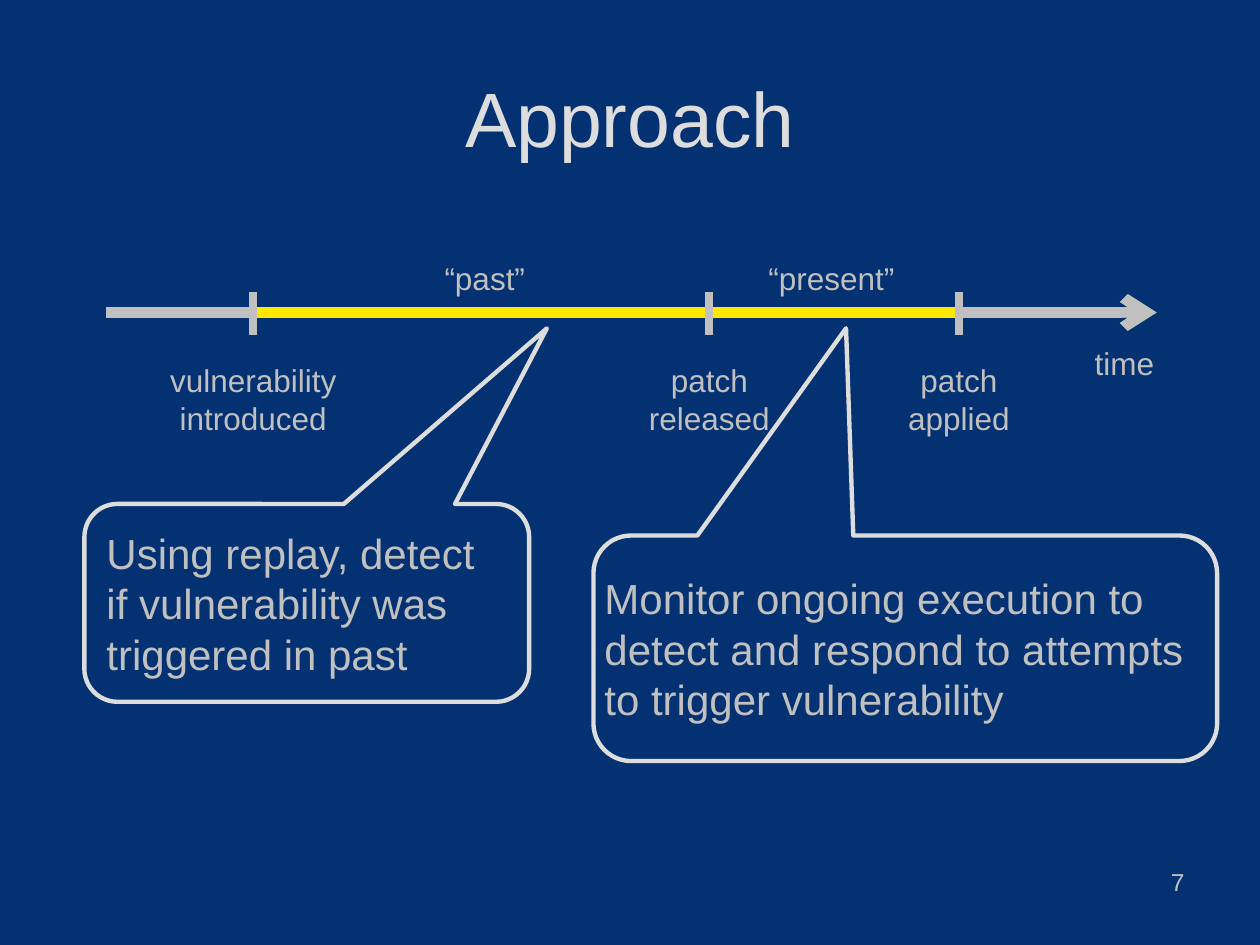
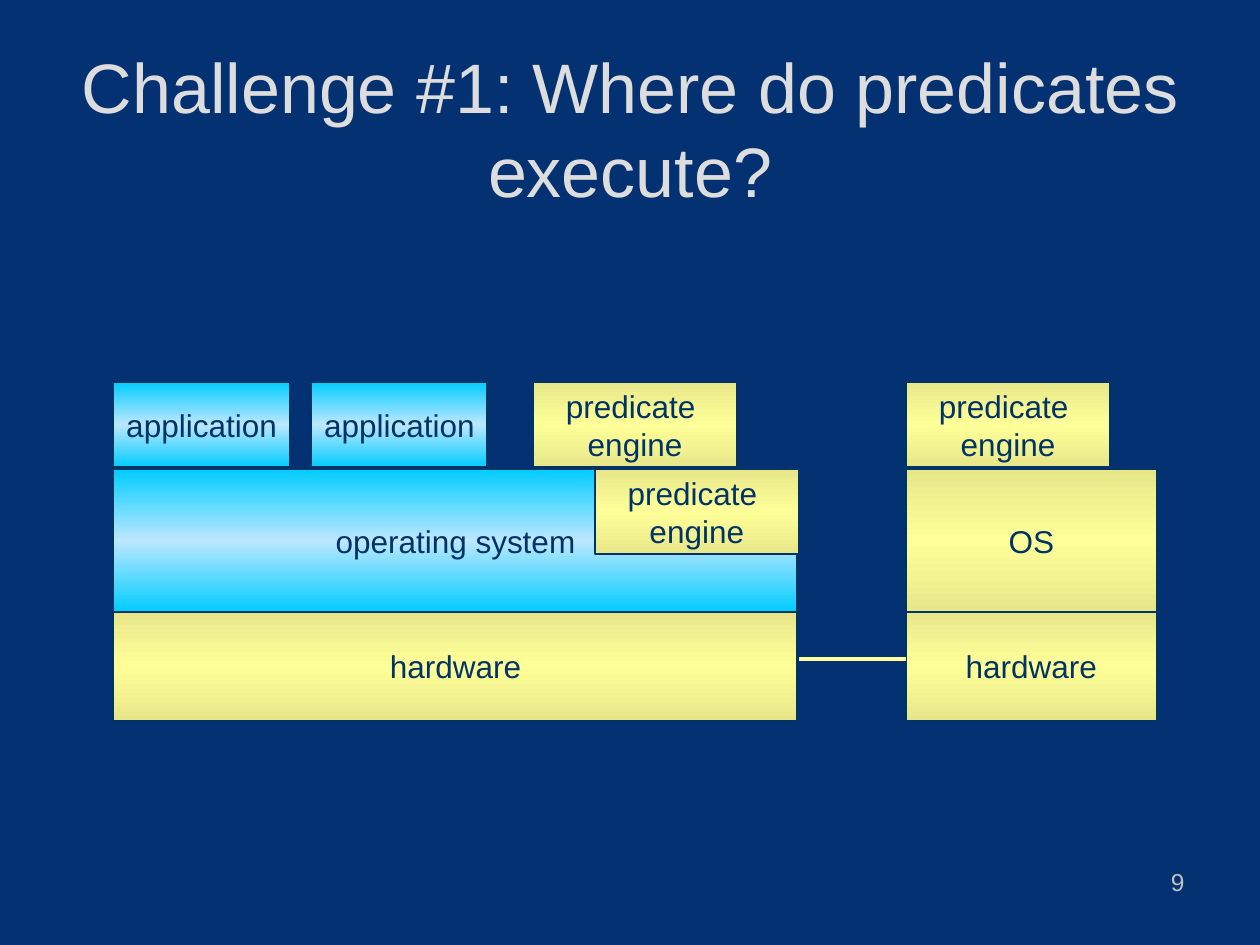
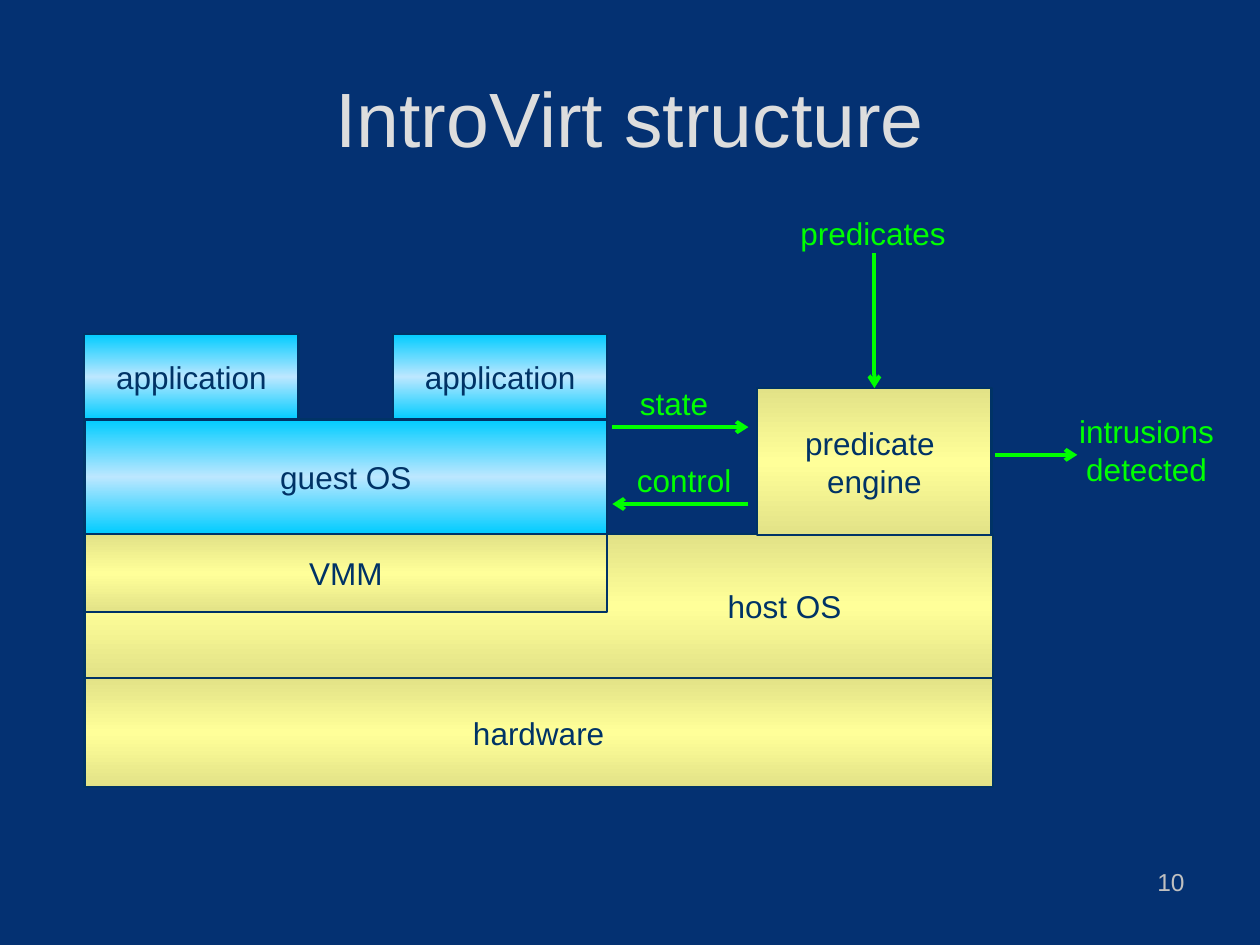
from lxml.etree import SubElement
from pptx import Presentation
from pptx.dml.color import RGBColor
from pptx.enum.shapes import MSO_CONNECTOR, MSO_SHAPE
from pptx.enum.text import MSO_ANCHOR, PP_ALIGN
from pptx.oxml.ns import qn
from pptx.util import Inches, Pt

HUES = {
    "back": "043172", "title": "DDDDDD", "text": "C0C0C0", "span": "FFE701",
    "under": "33CC33", "flow": "00FF00", "ink": "003366",
    "sand": "FFFF99", "sky": "00CCFF",
}
# Base colour, then the (position, modifier, percent) of each gradient stop
FADES = {
    "sand": ("sand", [(0, "shade", 80), (50, None, 0), (100, "shade", 80)]),
    "dusk": ("sand", [(0, "shade", 76), (50, None, 0), (100, "shade", 76)]),
    "sky": ("sky", [(0, None, 0), (50, "tint", 50), (100, None, 0)]),
}
ENGINE = "predicate \nengine"


def hue(name):
    return RGBColor.from_string(HUES[name])


def apply(item, **values):
    for name, value in values.items():
        setattr(item, name, value)


def write(shape, text, size, color, align=PP_ALIGN.CENTER, **frame):
    """Fill a shape with text; extra values go to its text frame."""
    body = shape.text_frame
    apply(body, **{"word_wrap": True, **frame})
    body.text = text
    for par in body.paragraphs:
        par.alignment = align
        apply(par.font, name="Arial", size=Pt(size))
        par.font.color.rgb = hue(color)


def label(slide, box, text, size=18, color="text", **form):
    shape = slide.shapes.add_textbox(*map(Inches, box))
    write(shape, text, size, color, **form)
    return shape


def line(slide, start, end, color, width, arrow=False):
    link = slide.shapes.add_connector(
        MSO_CONNECTOR.STRAIGHT, *map(Inches, (*start, *end)))
    link.line.color.rgb = hue(color)
    link.line.width = Pt(width)
    props = link._element.spPr
    if arrow:
        SubElement(props.find(qn("a:ln")), qn("a:tailEnd"), type="arrow")
    SubElement(props, qn("a:effectLst"))
    return link


def fade(shape, name):
    """Give a shape a vertical three-stop gradient."""
    base, stops = FADES[name]
    shape.fill.gradient()
    shape.fill.gradient_angle = 270
    ramp = shape._element.spPr.find(".//" + qn("a:gsLst"))
    ramp.clear()
    for pos, mod, part in stops:
        stop = SubElement(ramp, qn("a:gs"), pos=str(pos * 1000))
        color = SubElement(stop, qn("a:srgbClr"), val=HUES[base])
        if mod:
            SubElement(color, qn("a:" + mod), val=str(part * 1000))


def outline(slide, kind, box, color, width):
    shape = slide.shapes.add_shape(kind, *map(Inches, box))
    shape.shadow.inherit = False
    shape.line.color.rgb = hue(color)
    shape.line.width = Pt(width)
    return shape


def block(slide, box, text, look, **frame):
    shape = outline(slide, MSO_SHAPE.RECTANGLE, box, "ink", 1.25)
    fade(shape, look)
    write(shape, text, 18, "ink", word_wrap=False,
          vertical_anchor=MSO_ANCHOR.MIDDLE, **frame)
    return shape


def stack(slide, left, top, parts):
    """Place blocks given as (x, y, w, h, text, look) from a corner."""
    return [block(slide, (left + x, top + y, w, h), text, look)
            for x, y, w, h, text, look in parts]


def callout(slide, box, text, tip, **frame):
    shape = outline(slide, MSO_SHAPE.ROUNDED_RECTANGULAR_CALLOUT,
                    box, "title", 2.5)
    shape.fill.background()
    for spot, value in enumerate((*tip, 0.167)):
        shape.adjustments[spot] = value
    write(shape, text, 24, "text", PP_ALIGN.LEFT,
          vertical_anchor=MSO_ANCHOR.MIDDLE, **frame)


def page(deck, title, number, size=44, top=0.3):
    slide = deck.slides.add_slide(deck.slide_layouts[6])
    slide.background.fill.solid()
    slide.background.fill.fore_color.rgb = hue("back")
    label(slide, (7.17, 6.83, 2.33, 0.52), str(number), 14,
          align=PP_ALIGN.RIGHT)
    label(slide, (0.5, top, 9, 1.25), title, size, "title",
          vertical_anchor=MSO_ANCHOR.MIDDLE)
    return slide


def timeline(slide, left, mid, width):
    end = left + width
    line(slide, (end - 1.55, mid), (end, mid), "under", 6, True)
    line(slide, (left, mid), (end, mid), "text", 6, True)
    marks = [(1.17, 1.83, "vulnerability introduced"),
             (4.79, 1.83, "patch released"),
             (6.77, 1.55, "patch applied")]
    for (first, *_), (last, *_) in zip(marks, marks[1:]):
        line(slide, (left + first, mid), (left + last, mid), "span", 6)
    for x, wide, text in marks:
        spot = left + x
        line(slide, (spot, mid - 0.16), (spot, mid + 0.18), "text", 4.5)
        label(slide, (spot - wide / 2, mid + 0.34, wide, 0.7), text)
    for x, wide, text in [(2.59, 1, "“past”"), (5.16, 1.25, "“present”")]:
        label(slide, (left + x, mid - 0.47, wide, 0.4), text,
              align=PP_ALIGN.LEFT)
    label(slide, (end - 0.59, mid + 0.2, 0.67, 0.4), "time",
          align=PP_ALIGN.LEFT, word_wrap=False)


def approach(deck):
    slide = page(deck, "Approach", 7)
    timeline(slide, 0.84, 2.48, 8.34)
    callout(slide, (0.67, 4, 3.53, 1.57),
            "Using replay, detect if vulnerability was triggered in past",
            (0.54, -1.388))
    callout(slide, (4.71, 4.25, 4.95, 1.79),
            "Monitor ongoing execution to detect and respond to attempts "
            "to trigger vulnerability",
            (-0.095, -1.419), margin_left=0, margin_right=0)


def challenge(deck):
    slide = page(deck, "Challenge #1: Where do predicates execute?", 9,
                 40, 0.39)
    top, low, high = 3.03, 0.69, 1.82
    stack(slide, 0.9, top, [
        (0, high, 5.43, 0.87, "hardware", "sand"),
        (0, low, 5.43, 1.14, "operating system", "sky"),
        (0, 0, 1.4, 0.68, "application", "sky"),
        (1.57, 0, 1.4, 0.68, "application", "sky"),
        (3.33, 0, 1.62, 0.68, ENGINE, "sand"),
        (3.82, low, 1.62, 0.68, ENGINE, "sand"),
    ])
    stack(slide, 7.19, top, [
        (0, 0, 1.62, 0.68, ENGINE, "sand"),
        (0, high, 1.99, 0.87, "hardware", "sand"),
        (0, low, 1.99, 1.14, "OS", "sand"),
    ])
    line(slide, (6.34, 5.23), (7.19, 5.23), "sand", 1.75)


def flows(slide, left, top, engine):
    """Draw the green arrows and labels around the predicate engine."""
    for text, x, y, wide in [("state", 0.1, 1.35, 0.78),
                             ("control", 0.03, 1.96, 1.08),
                             ("predicates", 1.22, 0, 1.7),
                             ("intrusions\vdetected", 3.53, 1.57, 1.42)]:
        tall = 0.7 if "\v" in text else 0.4
        label(slide, (left + x, top + y, wide, tall), text, color="flow")
    for x, y, to, down in [(0, 1.74, 1.08, 1.74), (1.08, 2.35, 0, 2.35),
                           (3.04, 1.96, 3.69, 1.96)]:
        line(slide, (left + x, top + y), (left + to, top + down),
             "flow", 2.25, True)
    feed = line(slide, (left + 2.08, top + 0.36), (left + 2.08, top + 1.43),
                "flow", 2.25, True)
    feed.end_connect(engine, 0)


def structure(deck):
    slide = page(deck, "IntroVirt structure", 10)
    left, top = 0.67, 2.65
    host = block(slide, (left, top + 1.59, 7.21, 1.14), "host OS", "dusk",
                 margin_left=Inches(4))
    engine, *_ = stack(slide, left, top, [
        (5.34, 0.43, 1.86, 1.17, ENGINE, "dusk"),
        (0, 2.73, 7.21, 0.87, "hardware", "dusk"),
        (0, 0.68, 4.15, 0.91, "guest OS", "sky"),
        (0, 0, 1.7, 0.68, "application", "sky"),
        (2.45, 0, 1.7, 0.68, "application", "sky"),
        (0, 1.59, 4.15, 0.62, "VMM", "dusk"),
    ])
    flows(slide, 4.86, 1.65, engine)


def main():
    deck = Presentation()
    apply(deck, slide_width=Inches(10), slide_height=Inches(7.5))
    for build in (approach, challenge, structure):
        build(deck)
    deck.save("out.pptx")


if __name__ == "__main__":
    main()
